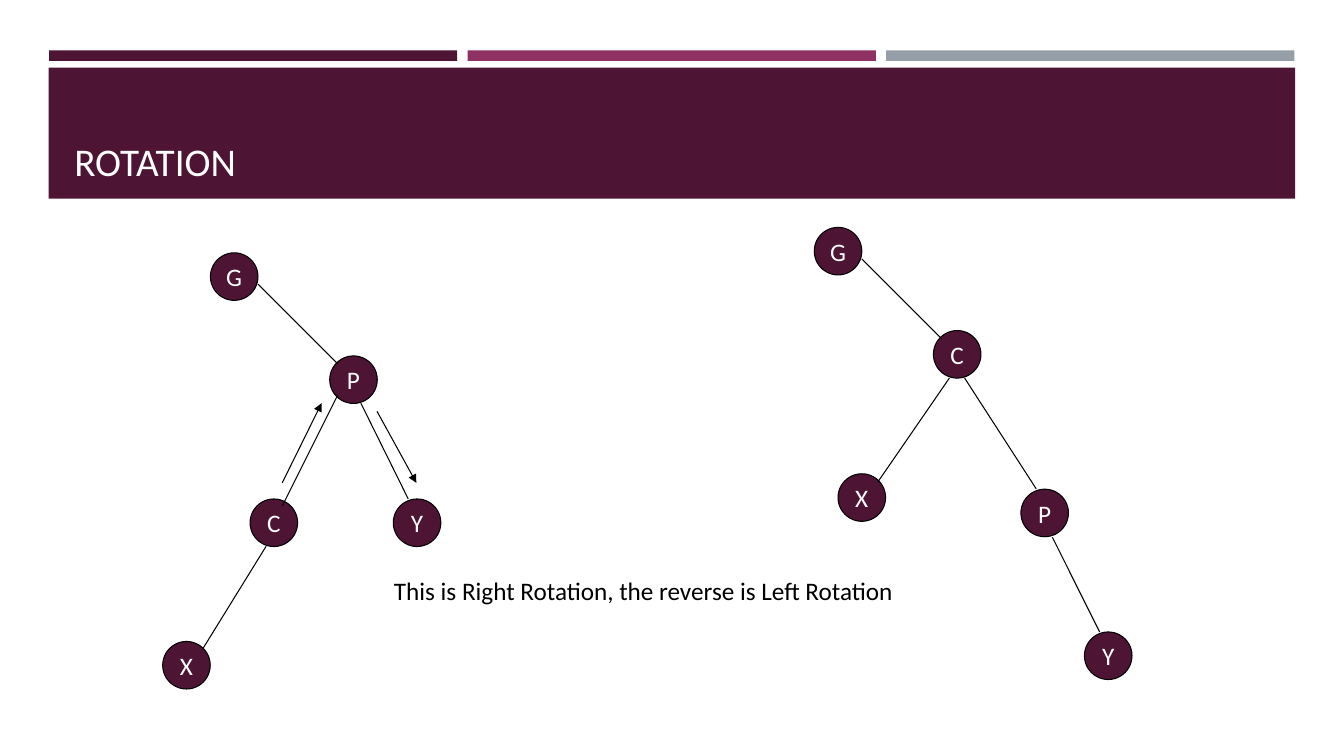
from pptx import Presentation, util as u
from pptx.dml import color
from pptx.enum import shapes, text
from pptx.oxml import ns
from lxml import etree

PLUM = color.RGBColor(0x4D, 0x14, 0x34)
MAGENTA = color.RGBColor(0x90, 0x31, 0x63)
GREY = color.RGBColor(0x96, 0x9F, 0xA7)
BLACK = color.RGBColor(0, 0, 0)
WHITE = color.RGBColor(255, 255, 255)
NODE_SIZE = 34

presentation = Presentation()
presentation.slide_width, presentation.slide_height = u.Pt(960), u.Pt(540)
slide = presentation.slides.add_slide(presentation.slide_layouts[6])


def add_filled(kind, left, top, width, height, fill):
    shape = slide.shapes.add_shape(kind, u.Pt(left), u.Pt(top), u.Pt(width), u.Pt(height))
    shape.shadow.inherit = False
    shape.fill.solid()
    shape.fill.fore_color.rgb = fill
    shape.line.fill.background()
    return shape


def write(shape, content, size, font_color, frame_format, alignment):
    frame = shape.text_frame
    for name, value in frame_format.items():
        setattr(frame, name, value)
    paragraph = frame.paragraphs[0]
    paragraph.alignment = alignment
    run = paragraph.add_run()
    run.text = content
    for name, value in {"name": "Calibri", "size": u.Pt(size)}.items():
        setattr(run.font, name, value)
    run.font.color.rgb = font_color


RECTANGLE = shapes.MSO_SHAPE.RECTANGLE
for column, fill in enumerate((PLUM, MAGENTA, GREY)):
    add_filled(RECTANGLE, 35 + 299 * column, 36, 291.6, 7.5, fill)
add_filled(RECTANGLE, 34.8, 48.4, 890.4, 93.6, PLUM)

title = slide.shapes.add_textbox(u.Pt(46.1), u.Pt(55.4), u.Pt(868.3), u.Pt(79.9))
title_format = {"word_wrap": True, "vertical_anchor": text.MSO_ANCHOR.BOTTOM}
write(title, "ROTATION", 28, WHITE, title_format, text.PP_ALIGN.LEFT)

trees = [
    {
        "nodes": [("G", 150.3, 180.6), ("X", 116.2, 458.2), ("Y", 280.9, 356.4),
                  ("C", 178.6, 356.4), ("P", 235.5, 254.2)],
        "edges": [(241.2, 282.2, 201.6, 361.4), (257.8, 288, 291.6, 356.4),
                  (190.1, 390.2, 144.7, 463.7), (184.3, 203, 241.2, 259.9)],
        "arrows": [(201.6, 344.9, 229.7, 288), (269.3, 293.8, 297.4, 344.9)],
    },
    {
        "nodes": [("G", 581.6, 162.4), ("X", 598.6, 338.4), ("Y", 774.6, 451.4),
                  ("C", 666.7, 236.1), ("P", 729.2, 349.4)],
        "edges": [(689, 270, 740.2, 349.2), (751.7, 383.8, 785.5, 451.4),
                  (678.2, 270, 627.1, 344.2), (615.6, 185, 672.5, 241.9)],
        "arrows": [],
    },
]

node_format = {"word_wrap": False, "vertical_anchor": text.MSO_ANCHOR.MIDDLE}
for tree in trees:
    for label, left, top in tree["nodes"]:
        node = add_filled(shapes.MSO_SHAPE.OVAL, left, top, NODE_SIZE, NODE_SIZE, PLUM)
        node.line.color.rgb = BLACK
        node.line.width = u.Pt(0.75)
        write(node, label, 18, WHITE, node_format, text.PP_ALIGN.CENTER)
    for kind in ("edges", "arrows"):
        for ends in tree[kind]:
            connector = slide.shapes.add_connector(
                shapes.MSO_CONNECTOR.STRAIGHT, *(u.Pt(value) for value in ends))
            connector.line.color.rgb = BLACK
            connector.line.width = u.Pt(0.75)
            properties = connector.element.spPr
            if kind == "arrows":
                outline = properties.find(ns.qn("a:ln"))
                etree.SubElement(outline, ns.qn("a:tailEnd"), type="triangle")
            etree.SubElement(properties, ns.qn("a:effectLst"))

caption = slide.shapes.add_textbox(u.Pt(274.3), u.Pt(407.5), u.Pt(382.3), u.Pt(29))
caption_format = {"word_wrap": False, "auto_size": text.MSO_AUTO_SIZE.SHAPE_TO_FIT_TEXT}
write(caption, "This is Right Rotation, the reverse is Left Rotation", 18, BLACK,
      caption_format, text.PP_ALIGN.LEFT)

presentation.save("out.pptx")
